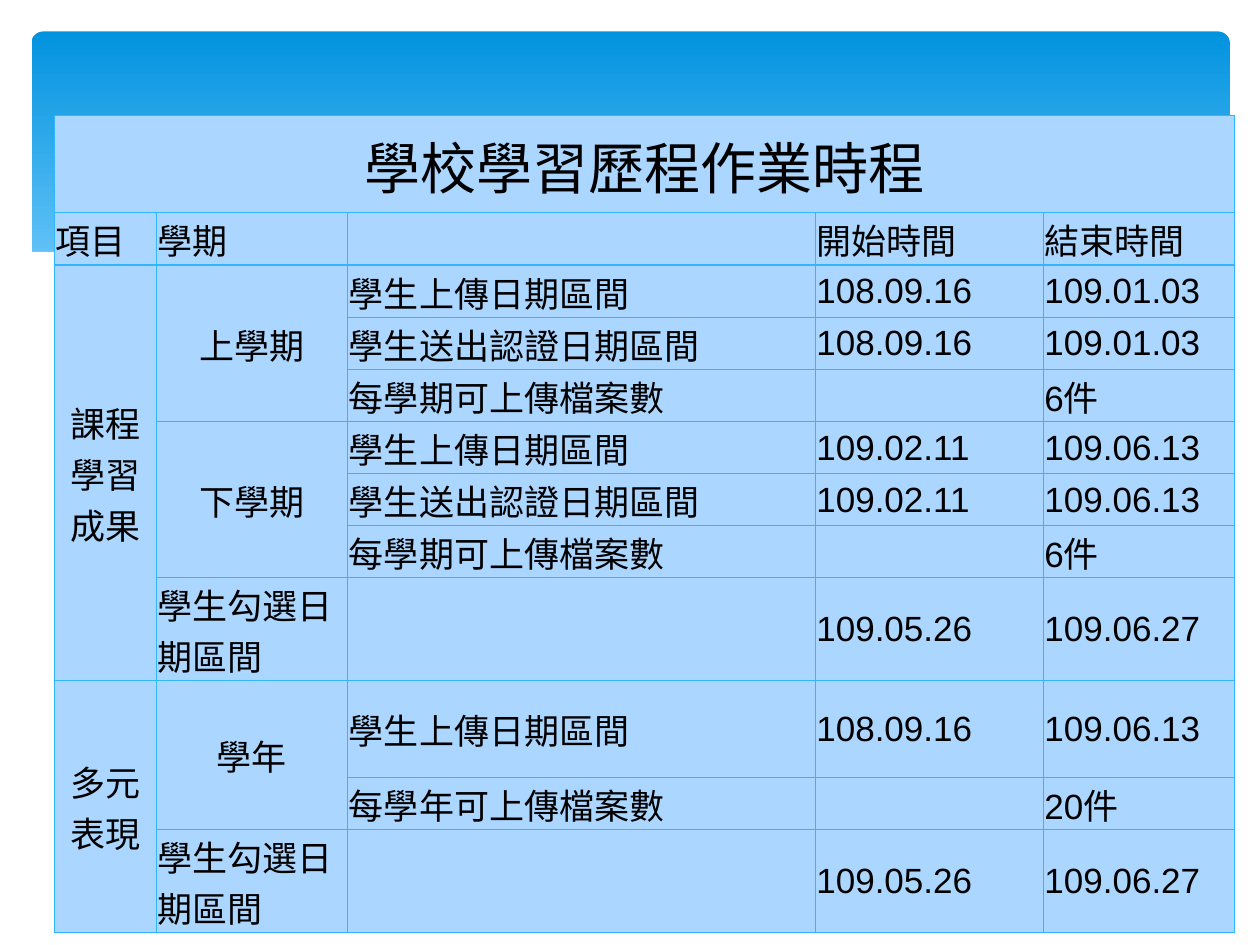
from lxml import etree
from pptx import Presentation, util as u
from pptx.dml.color import RGBColor
from pptx.enum import shapes, text
from pptx.oxml import ns

WHITE = RGBColor(0xFF, 0xFF, 0xFF)
BLACK = RGBColor(0, 0, 0)
DEEP = RGBColor(0x02, 0x93, 0xE0)
LIGHT = RGBColor(0x83, 0xD3, 0xFE)
CELL = RGBColor(0xAB, 0xD6, 0xFF)
EDGE = RGBColor(0x31, 0xB6, 0xFD)

COLS = [0.81, 1.52, 3.71, 1.81, 1.52]
ROWS = [0.77] + [0.38] * 7 + [0.69, 0.77, 0.38, 0.69]
SENT = "學生上傳日期區間"
CERT = "學生送出認證日期區間"
FILES = "每學期可上傳檔案數"
PICK = "學生勾選日期區間"
DATA = [
    ["學校學習歷程作業時程", "", "", "", ""],
    ["項目", "學期", "", "開始時間", "結束時間"],
    ["課程學習成果", "上學期", SENT, "108.09.16", "109.01.03"],
    ["", "", CERT, "108.09.16", "109.01.03"],
    ["", "", FILES, "", "6件"],
    ["", "下學期", SENT, "109.02.11", "109.06.13"],
    ["", "", CERT, "109.02.11", "109.06.13"],
    ["", "", FILES, "", "6件"],
    ["", PICK, "", "109.05.26", "109.06.27"],
    ["多元表現", "學年", SENT, "108.09.16", "109.06.13"],
    ["", "", "每學年可上傳檔案數", "", "20件"],
    ["", PICK, "", "109.05.26", "109.06.27"],
]
# First cell of each merged block: rows and columns it spans
SPANS = {(0, 0): (1, 5), (2, 0): (7, 1), (2, 1): (3, 1), (5, 1): (3, 1),
         (9, 0): (3, 1), (9, 1): (2, 1)}
# Top edge of the white wave, as shares of its box
WAVE = [(0, 0.2), (0.03, 0.13), (0.08, 0.05), (0.13, 0.01), (0.18, 0),
        (0.24, 0.02), (0.31, 0.07), (0.39, 0.17), (0.48, 0.3), (0.56, 0.42),
        (0.63, 0.51), (0.7, 0.57), (0.76, 0.62), (0.82, 0.64), (0.88, 0.62),
        (0.94, 0.56), (1, 0.43)]


def set_all(obj, vals):
    for name, val in vals.items():
        setattr(obj, name, val)


def banner(slide, box):
    """Rounded panel with a blue gradient."""
    panel = slide.shapes.add_shape(shapes.MSO_SHAPE.ROUNDED_RECTANGLE,
                                   *map(u.Inches, box))
    panel.adjustments[0] = 0.034
    panel.shadow.inherit = False
    panel.line.fill.background()
    panel.fill.gradient()
    panel.fill.gradient_angle = 270
    for stop, tone, pos in zip(panel.fill.gradient_stops, (DEEP, LIGHT), (0, 0.9)):
        stop.color.rgb = tone
        stop.position = pos


def wave(slide, box):
    """White area that cuts the panel along a curve."""
    left, top, wide, high = box
    pts = [(left + x * wide, top + y * high) for x, y in WAVE + [(1, 1), (0, 1)]]
    form = slide.shapes.build_freeform(*pts[0], scale=u.Inches(1))
    form.add_line_segments(pts[1:], close=True)
    shape = form.convert_to_shape()
    shape.shadow.inherit = False
    shape.fill.solid()
    shape.fill.fore_color.rgb = WHITE
    shape.line.fill.background()


def frame(cell):
    """Thin line on all four sides of a cell."""
    props = cell._tc.get_or_add_tcPr()
    for i, side in enumerate(("lnL", "lnR", "lnT", "lnB")):
        line = etree.Element(ns.qn("a:" + side), w=str(u.Pt(0.75)))
        fill = etree.SubElement(line, ns.qn("a:solidFill"))
        etree.SubElement(fill, ns.qn("a:srgbClr"), val=str(EDGE))
        props.insert(i, line)


def style(cell, words, size, mid):
    thin = u.Inches(0.01)
    set_all(cell, {"text": words, "margin_left": thin, "margin_right": thin,
                   "margin_top": thin, "margin_bottom": 0,
                   "vertical_anchor": text.MSO_ANCHOR.MIDDLE})
    cell.fill.solid()
    cell.fill.fore_color.rgb = CELL
    para = cell.text_frame.paragraphs[0]
    para.alignment = text.PP_ALIGN.CENTER if mid else text.PP_ALIGN.LEFT
    set_all(para.font, {"size": u.Pt(size), "name": "Arial"})
    for run in para.runs:
        set_all(run.font, {"size": u.Pt(size), "name": "Arial"})
        run.font.color.rgb = BLACK
    frame(cell)


def plan(slide, left, top):
    """Timetable with its heading row."""
    grid = slide.shapes.add_table(
        len(ROWS), len(COLS), u.Inches(left), u.Inches(top),
        u.Inches(sum(COLS)), u.Inches(sum(ROWS))).table
    set_all(grid, {"first_row": False, "horz_banding": False})
    for col, wide in zip(grid.columns, COLS):
        col.width = u.Inches(wide)
    for row, high in zip(grid.rows, ROWS):
        row.height = u.Inches(high)
    for r, line in enumerate(DATA):
        for c, words in enumerate(line):
            style(grid.cell(r, c), words, 20 if r else 32, (r, c) in SPANS)
    for (r, c), (down, across) in SPANS.items():
        grid.cell(r, c).merge(grid.cell(r + down - 1, c + across - 1))


def main():
    prs = Presentation()
    set_all(prs, {"slide_width": u.Inches(10), "slide_height": u.Inches(7.5)})
    slide = prs.slides.add_slide(prs.slide_layouts[6])
    banner(slide, (0.25, 0.25, 9.51, 2.7))
    wave(slide, (0.23, 1.84, 9.54, 1.45))
    plan(slide, 0.43, 0.92)
    prs.save("out.pptx")


if __name__ == "__main__":
    main()
